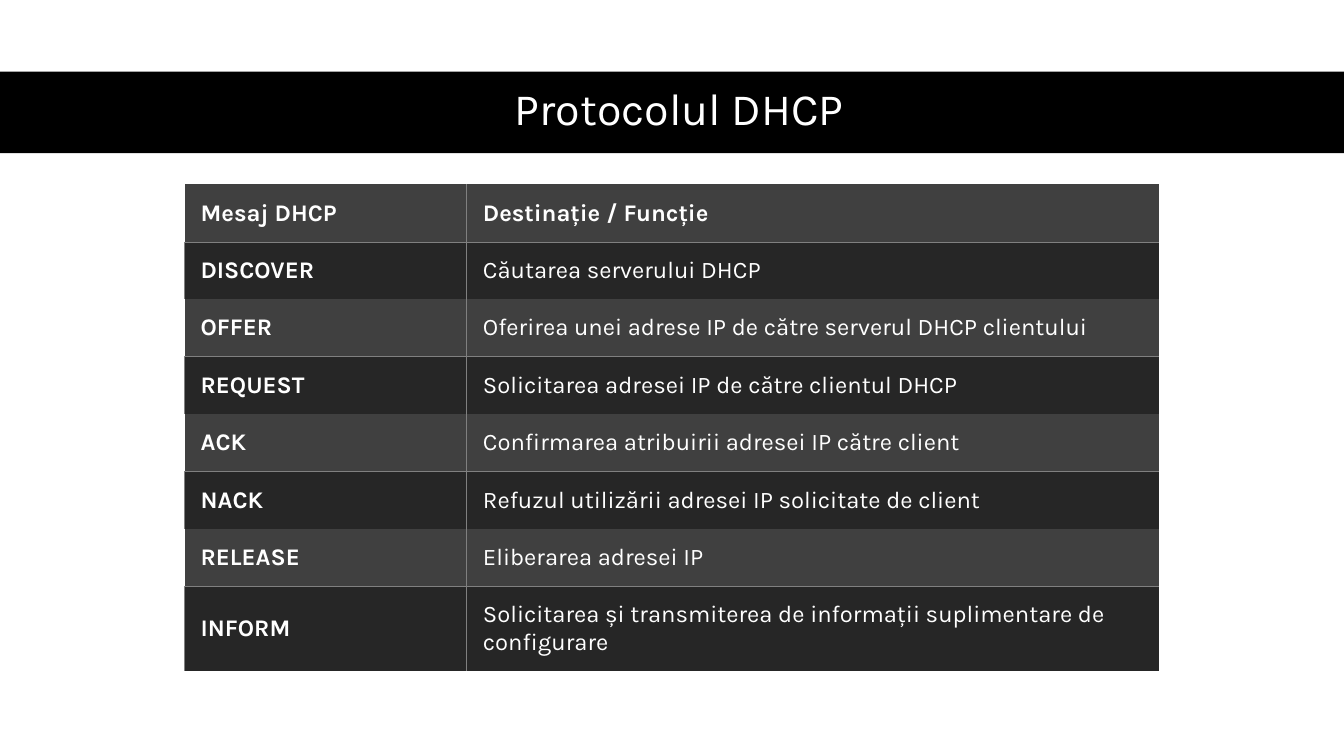
from lxml import etree
from pptx import Presentation
from pptx.dml.color import RGBColor
from pptx.enum.shapes import MSO_SHAPE
from pptx.enum.text import MSO_ANCHOR, PP_ALIGN
from pptx.oxml.ns import qn
from pptx.util import Inches, Pt

TITLE = "Protocolul DHCP"
MESSAGES = [
    ("Mesaj DHCP", "Destinație / Funcție"),
    ("DISCOVER", "Căutarea serverului DHCP"),
    ("OFFER", "Oferirea unei adrese IP de către serverul DHCP clientului"),
    ("REQUEST", "Solicitarea adresei IP de către clientul DHCP"),
    ("ACK", "Confirmarea atribuirii adresei IP către client"),
    ("NACK", "Refuzul utilizării adresei IP solicitate de client"),
    ("RELEASE", "Eliberarea adresei IP"),
    ("INFORM", "Solicitarea și transmiterea de informații suplimentare de configurare"),
]

WHITE = RGBColor(0xFF, 0xFF, 0xFF)
BLACK = RGBColor(0x00, 0x00, 0x00)
ROW_COLORS = [RGBColor(0x40, 0x40, 0x40), RGBColor(0x26, 0x26, 0x26)]
BORDER_COLOR = RGBColor(0x80, 0x80, 0x80)
RECTANGLE = MSO_SHAPE.RECTANGLE
MIDDLE = MSO_ANCHOR.MIDDLE
CENTER = PP_ALIGN.CENTER

SLIDE_WIDTH, SLIDE_HEIGHT = 13.33, 7.5
BAND_TOP, BAND_HEIGHT = 0.71, 0.81
TITLE_BOX = (0.61, 0.7, 12.26, BAND_HEIGHT)
TABLE_LEFT = TABLE_TOP = 1.83
COLUMN_WIDTHS = [2.8, 6.87]
ROW_HEIGHTS = [0.57] * (len(MESSAGES) - 1) + [0.84]
BORDERS = {
    (0, 0): "RB", (0, 1): "LB",
    (1, 0): "LTR", (1, 1): "LT",
}
CELL_FORMAT = {
    "vertical_anchor": MIDDLE,
    "margin_left": Inches(0.16),
    "margin_right": Inches(0.12),
    "margin_top": Inches(0.12),
    "margin_bottom": Inches(0.12),
}
TABLE_FLAGS = {"first_row": False, "horz_banding": False}


def apply_format(target, values):
    for name, value in values.items():
        setattr(target, name, value)


def format_font(font, size, bold):
    apply_format(font, {"name": "Karla", "size": Pt(size), "bold": bold})
    font.color.rgb = WHITE


def set_borders(cell, visible_sides):
    properties = cell._tc.get_or_add_tcPr()
    for position, side in enumerate("LRTB"):
        line = etree.Element(qn(f"a:ln{side}"), w=str(Pt(0.5)))
        if side in visible_sides:
            fill = etree.SubElement(line, qn("a:solidFill"))
            etree.SubElement(fill, qn("a:srgbClr"), val=str(BORDER_COLOR))
        else:
            etree.SubElement(line, qn("a:noFill"))
        properties.insert(position, line)


def add_title(slide):
    band = slide.shapes.add_shape(
        RECTANGLE, 0, Inches(BAND_TOP), Inches(SLIDE_WIDTH), Inches(BAND_HEIGHT))
    band.shadow.inherit = False
    band.fill.solid()
    band.fill.fore_color.rgb = BLACK
    band.line.fill.background()
    title = slide.shapes.title
    band._element.addnext(title._element)
    left, top, width, height = map(Inches, TITLE_BOX)
    apply_format(title, {"left": left, "top": top, "width": width, "height": height})
    title.text_frame.text = TITLE
    title.text_frame.vertical_anchor = MIDDLE
    paragraph = title.text_frame.paragraphs[0]
    apply_format(paragraph, {"alignment": CENTER, "line_spacing": 0.9})
    format_font(paragraph.runs[0].font, 32, False)


def add_message_table(slide):
    table = slide.shapes.add_table(
        len(MESSAGES), len(COLUMN_WIDTHS), Inches(TABLE_LEFT), Inches(TABLE_TOP),
        Inches(sum(COLUMN_WIDTHS)), Inches(sum(ROW_HEIGHTS))).table
    apply_format(table, TABLE_FLAGS)
    for column, width in zip(table.columns, COLUMN_WIDTHS):
        column.width = Inches(width)
    for row_index, message in enumerate(MESSAGES):
        table.rows[row_index].height = Inches(ROW_HEIGHTS[row_index])
        band = row_index % 2
        for column_index, text in enumerate(message):
            cell = table.cell(row_index, column_index)
            cell.text = text
            apply_format(cell, CELL_FORMAT)
            cell.fill.solid()
            cell.fill.fore_color.rgb = ROW_COLORS[band]
            set_borders(cell, BORDERS[band, column_index])
            bold = row_index == 0 or column_index == 0
            format_font(cell.text_frame.paragraphs[0].runs[0].font, 17, bold)


def main():
    presentation = Presentation()
    presentation.slide_width = Inches(SLIDE_WIDTH)
    presentation.slide_height = Inches(SLIDE_HEIGHT)
    slide = presentation.slides.add_slide(presentation.slide_layouts[5])
    add_title(slide)
    add_message_table(slide)
    presentation.save("out.pptx")


if __name__ == "__main__":
    main()
